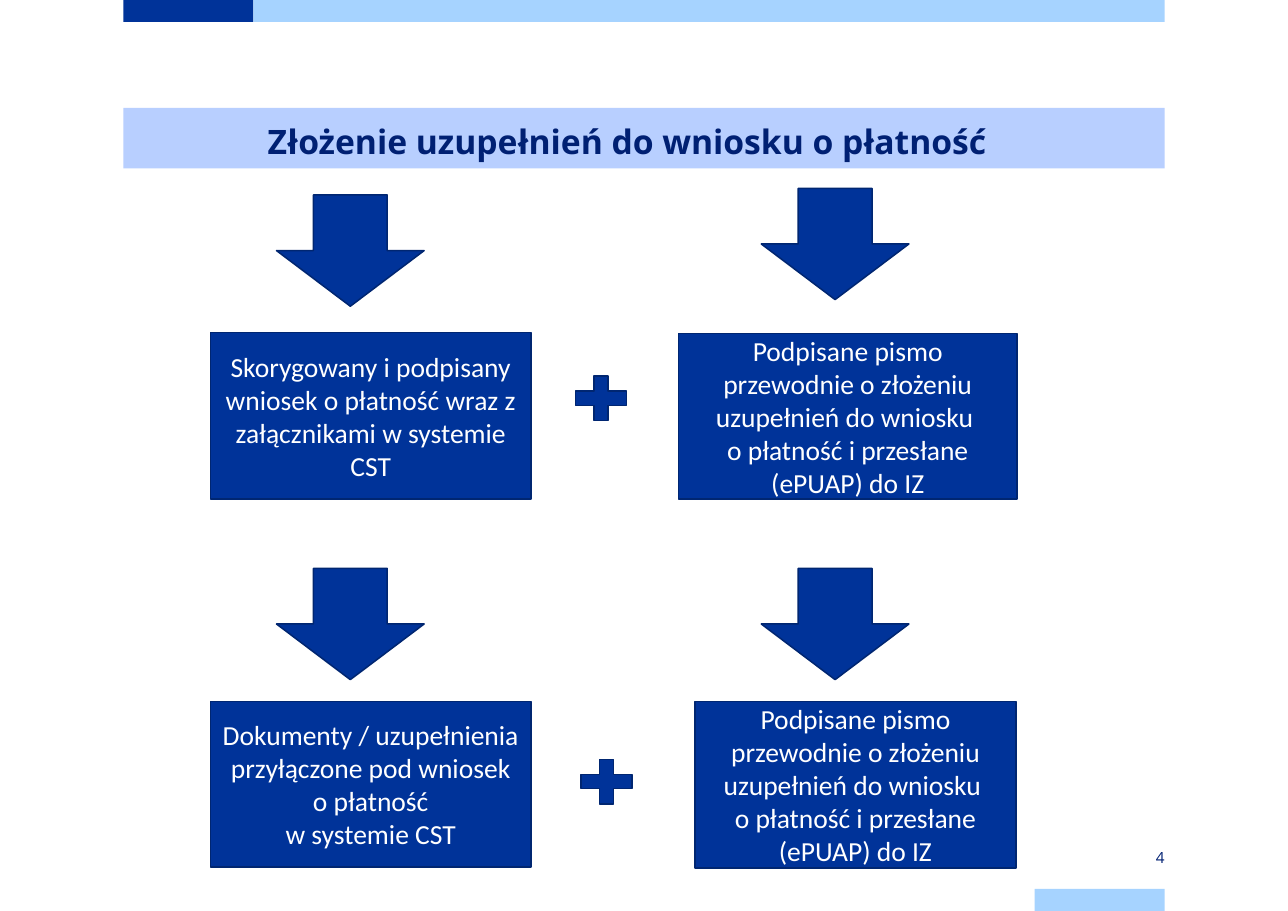
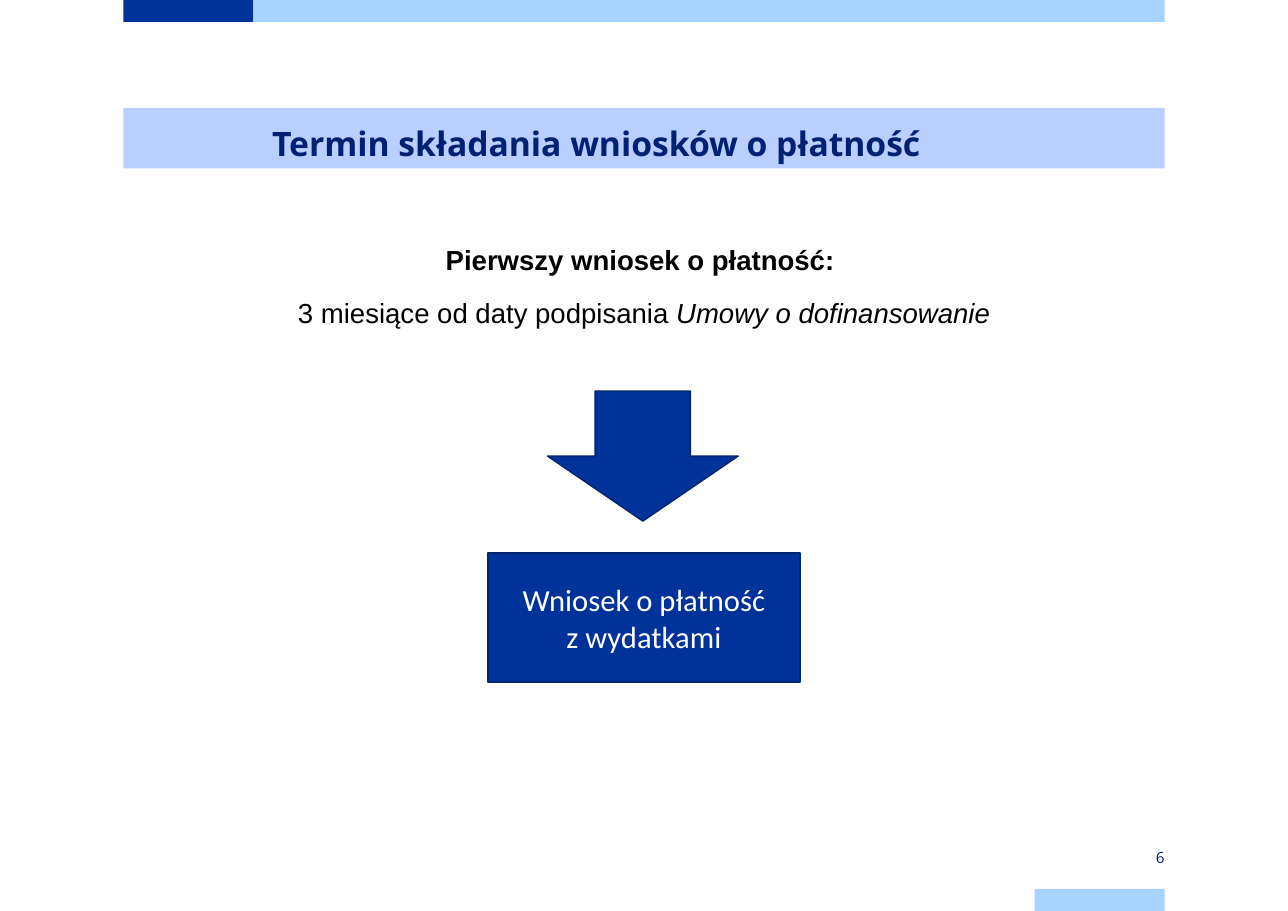
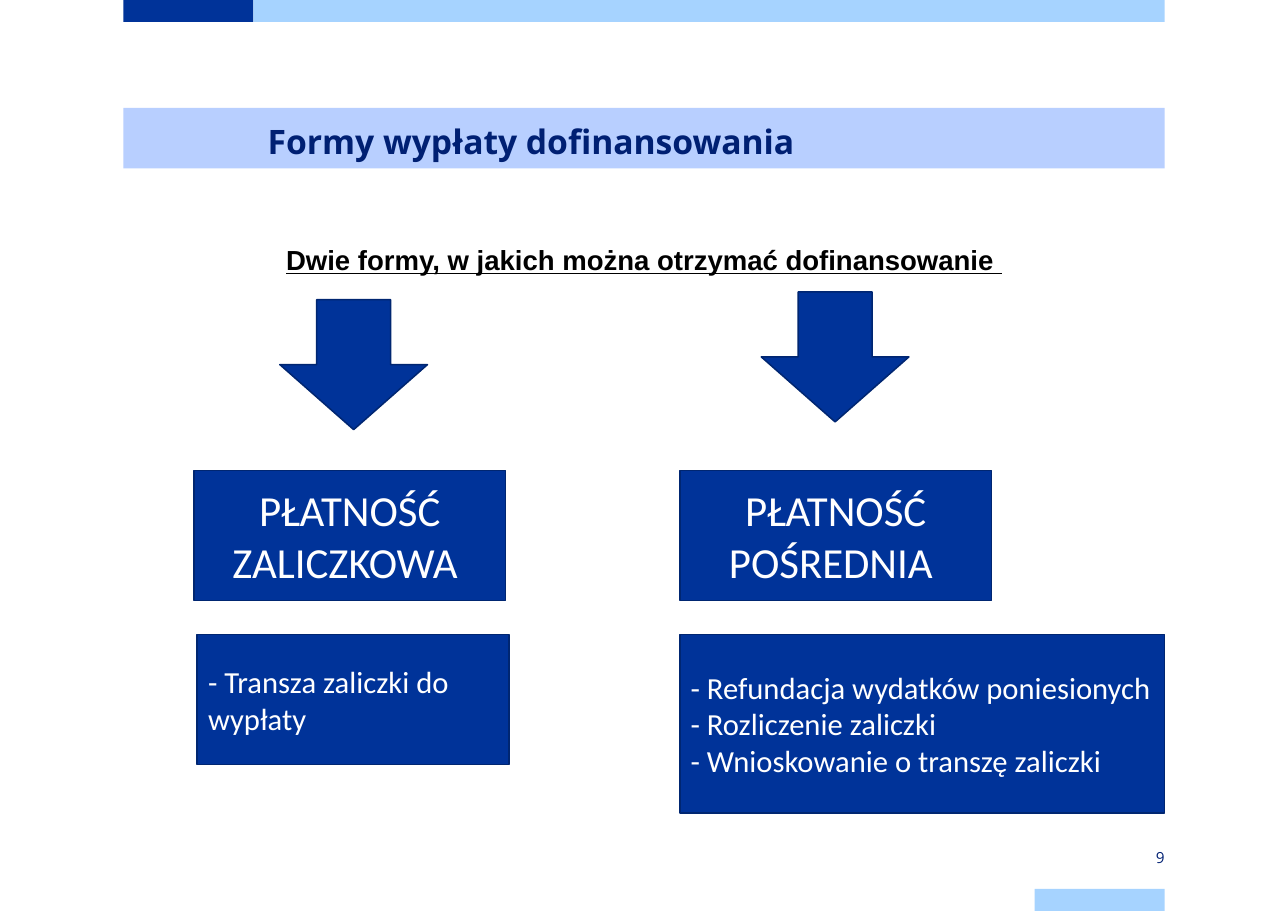
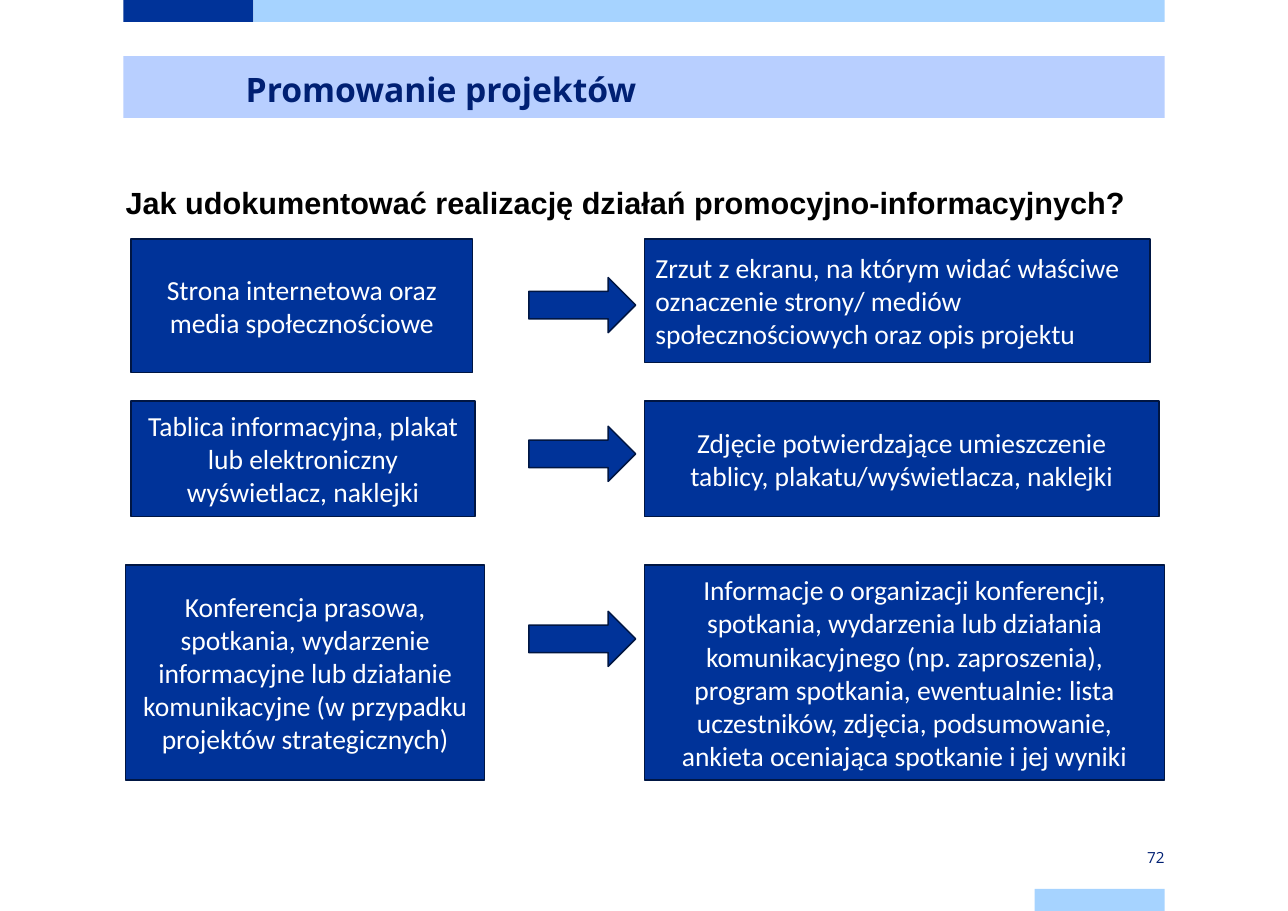
from dataclasses import dataclass, field
from typing import Any

from pptx import Presentation
from pptx.dml.color import RGBColor
from pptx.enum.shapes import MSO_SHAPE
from pptx.enum.text import MSO_ANCHOR, MSO_AUTO_SIZE, PP_ALIGN
from pptx.oxml.xmlchemy import OxmlElement
from pptx.util import Emu, Pt

RECT = MSO_SHAPE.RECTANGLE
DOWN = MSO_SHAPE.DOWN_ARROW
RIGHT = MSO_SHAPE.RIGHT_ARROW
PLUS = MSO_SHAPE.MATH_PLUS
TOP, MID = MSO_ANCHOR.TOP, MSO_ANCHOR.MIDDLE
LEFT, MIDDLE, END = PP_ALIGN.LEFT, PP_ALIGN.CENTER, PP_ALIGN.RIGHT
FIXED = MSO_AUTO_SIZE.NONE

SCALE = 9144
WIDE, HIGH = 1169, 827
EDGE, SPAN = 112, 945
BAND, TAB = 20, 118
ENDS = EDGE + SPAN - TAB

NAVY, SKY, PALE = "003399", "A6D3FF", "B8CFFF"
INK, BLACK, WHITE = "002073", "000000", "FFFFFF"
RIM, DARK = "002671", "001643"

HEAD = {"name": "Open Sans", "size": Pt(22), "bold": True}
FOOT = {"name": "Open Sans", "size": Pt(10)}
BODY = {"name": "Arial", "size": Pt(18)}
NODE = {"name": "Calibri"}
BOLD = {"bold": True}
BARE = {"margin_left": 0, "margin_right": 0, "margin_top": 0,
        "margin_bottom": 0, "word_wrap": True, "auto_size": FIXED}

LETTER = ("Podpisane pismo przewodnie o złożeniu uzupełnień do wniosku "
          "\vo płatność i przesłane (ePUAP) do IZ")

Box = tuple[int, int, int, int]
Span = tuple[str, dict[str, Any]]


@dataclass
class Node:
    kind: Any
    box: Box
    lines: list[str] = field(default_factory=list)
    size: int = 18
    align: Any = MIDDLE
    rim: str = RIM


@dataclass
class Page:
    number: int
    title: str
    indent: int
    nodes: list[Node]
    lead: float = 34.5
    bar: Box = (EDGE, 98, SPAN, 55)
    body: list[list[Span]] = field(default_factory=list)
    area: Box = (EDGE, 217, SPAN, 402)
    align: Any = MIDDLE
    look: dict[str, Any] = field(default_factory=lambda: BODY)


def px(value: int) -> Emu:
    return Emu(value * SCALE)


def ink(code: str) -> RGBColor:
    return RGBColor.from_string(code)


def put(thing: Any, values: dict[str, Any]) -> None:
    for name, value in values.items():
        setattr(thing, name, value)


def place(shape: Any, box: Box) -> None:
    put(shape, dict(zip(("left", "top", "width", "height"), map(px, box))))


def paint(shape: Any, fill: str, rim: str = "") -> None:
    shape.fill.solid()
    shape.fill.fore_color.rgb = ink(fill)
    if rim:
        shape.line.color.rgb = ink(rim)
        shape.line.width = Pt(1)
    else:
        shape.line.fill.background()


def draw(slide: Any, kind: Any, box: Box, fill: str, rim: str = "") -> Any:
    shape = slide.shapes.add_shape(kind, *map(px, box))
    shape.shadow.inherit = False
    paint(shape, fill, rim)
    return shape


def write(frame: Any, lines: list[list[Span]], look: dict[str, Any],
          color: str, align: Any, lead: float = 0, gap: int = 0,
          indent: int = -1) -> None:
    for index, spans in enumerate(lines):
        par = frame.add_paragraph() if index else frame.paragraphs[0]
        if indent >= 0:
            props = par._p.get_or_add_pPr()
            props.set("marL", str(px(indent)))
            props.set("indent", "0")
            props.append(OxmlElement("a:buNone"))
        put(par, {"alignment": align, "space_before": Pt(gap if index else 0)})
        if lead:
            par.line_spacing = Pt(lead)
        for text, extra in spans:
            for turn, part in enumerate(text.split("\v")):
                if turn:
                    par.add_line_break()
                run = par.add_run()
                run.text = part
                put(run.font, look | extra)
                run.font.color.rgb = ink(color)


def set_bands(deck: Any, slide: Any) -> None:
    bands = [((EDGE, 0, TAB, BAND), NAVY),
             ((EDGE + TAB, 0, SPAN - TAB, BAND), SKY),
             ((ENDS, HIGH - BAND, TAB, BAND), SKY)]
    for index, (box, fill) in enumerate(bands):
        part = draw(slide, RECT, box, fill).element
        part.nvSpPr.cNvPr.set("id", str(50 + index))
        deck.slide_master.shapes.element.insert(2 + index, part)


def build(deck: Any, page: Page) -> Any:
    slide = deck.slides.add_slide(deck.slide_layouts[1 if page.body else 5])
    title = slide.shapes.title
    place(title, page.bar)
    paint(title, PALE)
    put(title.text_frame, BARE | {"vertical_anchor": TOP})
    write(title.text_frame, [[(page.title, {})]], HEAD, INK, LEFT,
          page.lead, indent=page.indent)
    if page.body:
        body = slide.placeholders[1]
        place(body, page.area)
        put(body.text_frame, BARE | {"vertical_anchor": TOP})
        write(body.text_frame, page.body, page.look, BLACK, page.align,
              24, 11, 0)
    foot = slide.shapes.add_textbox(*map(px, (ENDS, 768, TAB, BAND)))
    put(foot.text_frame, BARE | {"margin_top": px(8), "margin_bottom": px(8),
                                 "vertical_anchor": MID})
    write(foot.text_frame, [[(str(page.number), {})]], FOOT, INK, END)
    for node in page.nodes:
        shape = draw(slide, node.kind, node.box, NAVY, node.rim)
        if node.lines:
            shape.text_frame.vertical_anchor = MID
            shape.text_frame.word_wrap = True
            write(shape.text_frame, [[(line, {})] for line in node.lines],
                  NODE | {"size": Pt(node.size)}, WHITE, node.align)
    return slide


def row(top: int, left: Box, right: Box, cause: str, proof: str,
        align: Any = MIDDLE) -> list[Node]:
    return [Node(RECT, left, [cause], rim=DARK),
            Node(RIGHT, (480, top, 97, 50), rim=DARK),
            Node(RECT, right, [proof], align=align, rim=DARK)]


def pages() -> list[Page]:
    send = [Node(DOWN, (x, y, 134, 101))
            for x, y in ((251, 177), (691, 171), (251, 516), (691, 516))]
    send += [Node(PLUS, (x, y, 63, 55)) for x, y in ((514, 334), (519, 682))]
    send += [
        Node(RECT, (191, 302, 291, 151),
             ["Skorygowany i podpisany wniosek o płatność wraz z "
              "załącznikami w systemie CST"]),
        Node(RECT, (616, 303, 307, 150), [LETTER]),
        Node(RECT, (191, 637, 291, 150),
             ["Dokumenty / uzupełnienia przyłączone pod wniosek o płatność",
              "w systemie CST"]),
        Node(RECT, (631, 637, 291, 151), [LETTER]),
    ]
    term = [Node(DOWN, (497, 355, 173, 118)),
            Node(RECT, (443, 502, 283, 117),
                 ["Wniosek o płatność", "z wydatkami"], 20)]
    forms = [Node(DOWN, (x, y, 134, 118)) for x, y in ((254, 272), (691, 265))]
    forms += [Node(RECT, (x, 427, 283, 118), [text], 28)
              for x, text in ((176, "PŁATNOŚĆ ZALICZKOWA "),
                              (617, "PŁATNOŚĆ POŚREDNIA "))]
    forms += [
        Node(RECT, (179, 576, 283, 118),
             ["- Transza zaliczki do wypłaty"], 20, LEFT),
        Node(RECT, (617, 576, 440, 162),
             ["- Refundacja wydatków poniesionych", "- Rozliczenie zaliczki",
              "- Wnioskowanie o transzę zaliczki"], 20, LEFT),
    ]
    proofs = row(
        252, (119, 217, 310, 121), (585, 217, 459, 112),
        "Strona internetowa oraz media społecznościowe",
        "Zrzut z ekranu, na którym widać właściwe oznaczenie strony/ mediów "
        "społecznościowych oraz opis projektu", LEFT)
    proofs += row(
        387, (119, 364, 312, 105), (585, 364, 467, 105),
        "Tablica informacyjna, plakat lub elektroniczny wyświetlacz, naklejki",
        "Zdjęcie potwierdzające umieszczenie tablicy, "
        "plakatu/wyświetlacza, naklejki")
    proofs += row(
        555, (114, 513, 326, 195), (585, 513, 472, 195),
        "Konferencja prasowa, spotkania, wydarzenie informacyjne lub działanie "
        "komunikacyjne (w przypadku projektów strategicznych)",
        "Informacje o organizacji konferencji, spotkania, wydarzenia lub "
        "działania komunikacyjnego (np. zaproszenia), program spotkania, "
        "ewentualnie: lista uczestników, zdjęcia, podsumowanie, ankieta "
        "oceniająca spotkanie i jej wyniki")
    return [
        Page(4, "Złożenie uzupełnień do wniosku o płatność", 131, send),
        Page(6, "Termin składania wniosków o płatność", 135, term, lead=36,
             body=[[("Pierwszy wniosek o płatność: ", BOLD)],
                   [("3 miesiące od daty podpisania ", {}),
                    ("Umowy o dofinansowanie", {"italic": True})]]),
        Page(9, "Formy wypłaty dofinansowania", 131, forms,
             area=(EDGE, 217, SPAN, 512),
             body=[[("Dwie formy, w jakich można otrzymać dofinansowanie ",
                     BOLD | {"underline": True})]]),
        Page(72, "Promowanie projektów", 111, proofs,
             bar=(EDGE, 51, SPAN, 56), area=(114, 167, SPAN, 567), align=LEFT,
             body=[[("Jak udokumentować realizację działań "
                     "promocyjno-informacyjnych?", BOLD)]],
             look=BODY | {"size": Pt(20)}),
    ]


def main() -> None:
    deck = Presentation()
    put(deck, {"slide_width": px(WIDE), "slide_height": px(HIGH)})
    slides = [build(deck, page) for page in pages()]
    set_bands(deck, slides[0])
    deck.save("out.pptx")


if __name__ == "__main__":
    main()
